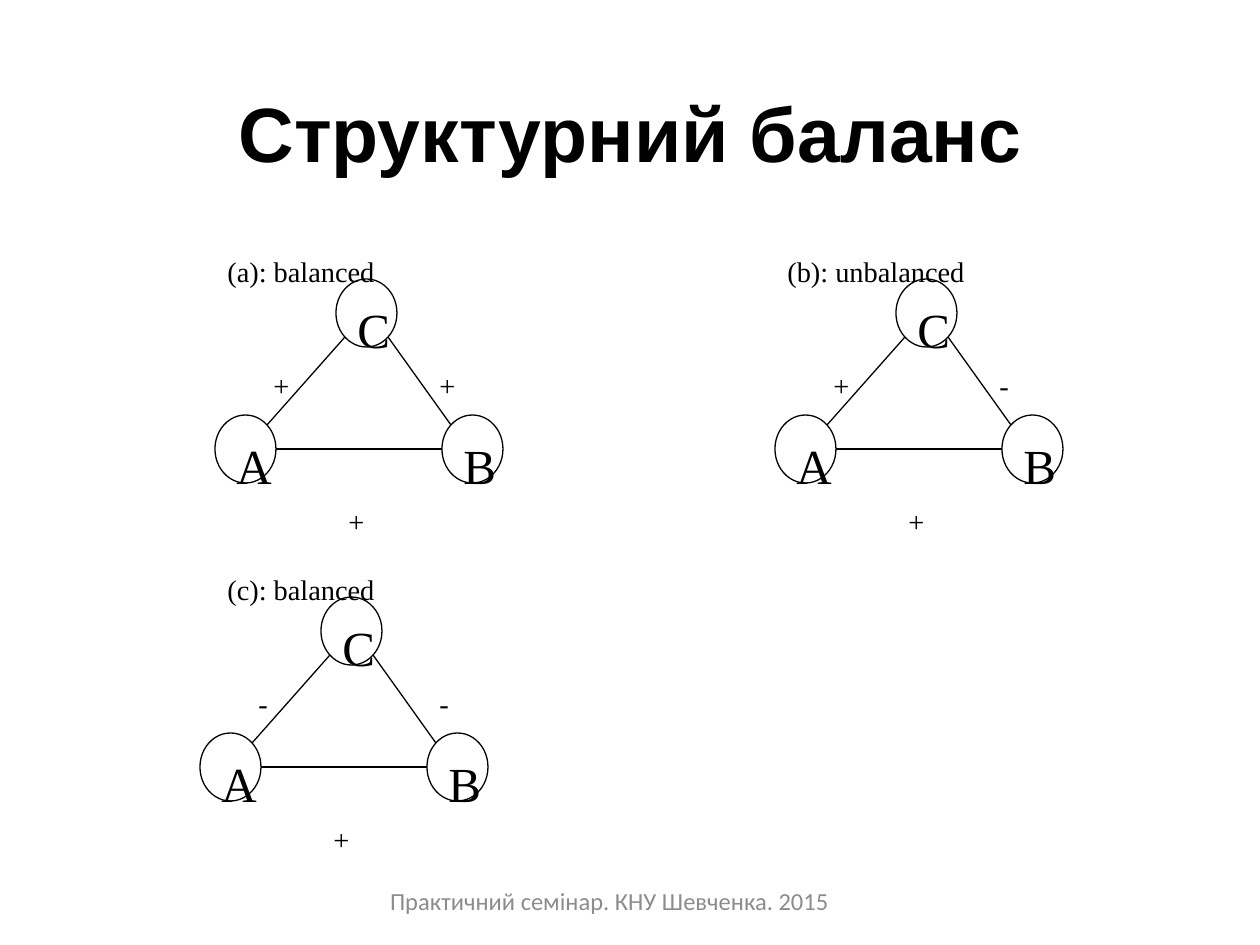
from math import sqrt

from pptx import Presentation
from pptx.dml.color import RGBColor
from pptx.enum.shapes import MSO_CONNECTOR as CONN, MSO_SHAPE as SHAPE
from pptx.enum.text import MSO_ANCHOR as ANCHOR, PP_ALIGN as ALIGN
from pptx.oxml.ns import qn
from pptx.util import Emu, Inches, Pt

PX = 914400 / 126
NODE_W, NODE_H = 61, 68


def px(*lengths):
    return [Emu(round(n * PX)) for n in lengths]


def color(hex_code):
    return RGBColor.from_string(hex_code)


def write(tf, text, size=28, font="Times New Roman", fill="000000", bold=False,
          align=ALIGN.LEFT, anchor=ANCHOR.TOP, top=11, baseline=0):
    tf.word_wrap = True
    tf.vertical_anchor = anchor
    tf.margin_top, tf.margin_bottom = px(top, 6)
    p = tf.paragraphs[0]
    p.alignment = align
    r = p.add_run()
    r.text = text
    r.font.size, r.font.name, r.font.bold = Pt(size), font, bold
    r.font.color.rgb = color(fill)
    if baseline:
        r.font._element.set("baseline", str(baseline * 1000))


class Sketch:
    """Style and elements of the balance diagrams."""
    ink, paper, muted, weight = "000000", "FFFFFF", "8C8C8C", Pt(0.75)

    def __init__(self, slide):
        self.s = slide

    def title(self, text, *box):
        sp = self.s.shapes.title
        sp.left, sp.top, sp.width, sp.height = px(*box)
        write(sp.text_frame, text, size=44, font="Arial", bold=True,
              align=ALIGN.CENTER, anchor=ANCHOR.MIDDLE, top=6)

    def text(self, text, *box, **style):
        sp = self.s.shapes.add_textbox(*px(*box))
        write(sp.text_frame, text, **style)

    def node(self, name, x, y):
        sp = self.s.shapes.add_shape(SHAPE.OVAL, *px(x, y, NODE_W, NODE_H))
        sp.shadow.inherit = False
        sp.fill.solid()
        sp.fill.fore_color.rgb = color(self.paper)
        sp.line.color.rgb = color(self.ink)
        sp.line.width = self.weight
        write(sp.text_frame, name)

    def edge(self, start, end):
        line = self.s.shapes.add_connector(CONN.STRAIGHT, *px(*start, *end))
        line.line.color.rgb = color(self.ink)
        line.line.width = self.weight
        sp_pr = line._element.spPr
        sp_pr.append(sp_pr.makeelement(qn("a:effectLst"), {}))

    def triad(self, x, y, signs, right_sign=212):
        a, b, c = (x, y), (x + 227, y), (x + 121, y - 136)
        for name, corner in zip("ABC", (a, b, c)):
            self.node(name, *corner)

        # Edges meet the circles at their sides and diagonals
        def rim(corner, dx, dy):
            return (corner[0] + NODE_W / 2 * (1 + dx),
                    corner[1] + NODE_H / 2 * (1 + dy))
        d = sqrt(0.5)
        self.edge(rim(a, d, -d), rim(c, -d, d))
        self.edge(rim(c, d, d), rim(b, -d, -d))
        self.edge(rim(a, 1, 0), rim(b, -1, 0))

        # Signs of the left, right and bottom edges
        places = (46, -91), (right_sign, -91), (121, 45)
        for sign, (dx, dy) in zip(signs, places):
            self.text(sign, x + dx, y + dy, 30, 45, baseline=-25)


def main():
    prs = Presentation()
    prs.slide_width, prs.slide_height = Inches(10), Inches(7.5)
    sketch = Sketch(prs.slides.add_slide(prs.slide_layouts[5]))
    sketch.title("Структурний баланс", 95, 53, 1071, 158)

    # Three triads
    sketch.triad(215, 415, "+++")
    sketch.triad(775, 415, "+-+")
    sketch.triad(200, 733, "--+", right_sign=227)

    # Captions
    for caption, x, y, w in (("(a): balanced", 215, 210, 272),
                             ("(b): unbalanced", 775, 210, 287),
                             ("(c): balanced", 215, 528, 257)):
        sketch.text(caption, x, y, w, 68, baseline=-25)

    # Footer
    sketch.text("Практичний семінар. КНУ Шевченка. 2015", 316, 876, 587, 50,
                size=14, font="Calibri", fill=sketch.muted,
                align=ALIGN.CENTER, anchor=ANCHOR.MIDDLE, top=6)
    prs.save("out.pptx")


if __name__ == "__main__":
    main()
